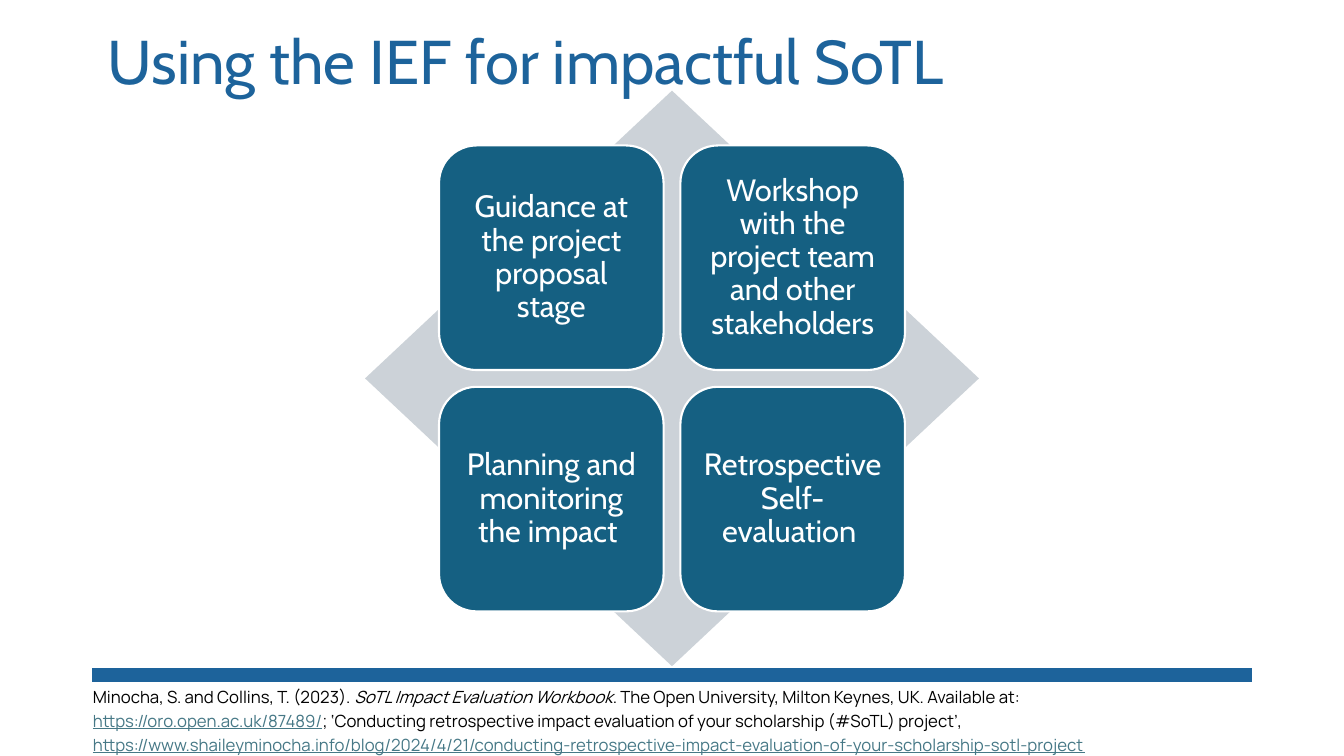
"""Build the slide on using the IEF for impactful SoTL."""
from dataclasses import dataclass

from lxml.etree import SubElement
from pptx import Presentation
from pptx.dml.color import RGBColor
from pptx.enum.shapes import MSO_CONNECTOR as Connector, MSO_SHAPE as Preset
from pptx.enum.text import MSO_ANCHOR as Anchor, MSO_AUTO_SIZE as AutoSize, PP_ALIGN as Align
from pptx.oxml.ns import qn
from pptx.util import Pt

BLUE, TEAL, GREY, WHITE, BLACK, LINK = "1D639B", "156082", "CCD2D8", "FFFFFF", "000000", "467886"
CENTRE_X, CENTRE_Y = 480, 270.3
DIAMOND_WIDTH, DIAMOND_HEIGHT = 438.5, 411.1
TILE_SIZE, TILE_PITCH = 160.4, 172.4


@dataclass(frozen=True)
class Use:
    text: str
    column: int
    row: int


@dataclass(frozen=True)
class Citation:
    text: str
    colour: str = BLACK
    italic: bool = False
    underline: bool = False


USES = [
    Use("Guidance at the project proposal stage", 0, 0),
    Use("Workshop with the project team and other stakeholders", 1, 0),
    Use("Planning and monitoring the impact ", 0, 1),
    Use("Retrospective Self-evaluation ", 1, 1),
]
CITATIONS = [
    Citation("Minocha, S. and Collins, T. (2023). "),
    Citation("SoTL Impact Evaluation Workbook", italic=True),
    Citation(". The Open University, Milton Keynes, UK. Available at: "),
    Citation("https://oro.open.ac.uk/87489/", LINK, underline=True),
    Citation("; ‘Conducting retrospective impact evaluation of your scholarship (#SoTL) project’, "),
    Citation("https://www.shaileyminocha.info/blog/2024/4/21/"
             "conducting-retrospective-impact-evaluation-of-your-scholarship-sotl-project",
             LINK, underline=True),
]


def rgb(colour: str) -> RGBColor:
    return RGBColor.from_string(colour)


def apply(target, formats: dict) -> None:
    for attribute, value in formats.items():
        setattr(target, attribute, value)


def add_run(paragraph, text: str, colour: str, **formats) -> None:
    run = paragraph.add_run()
    run.text = text
    apply(run.font, formats)
    run.font.color.rgb = rgb(colour)


def add_filled(slide, preset: Preset, centre_x: float, centre_y: float,
               width: float, height: float, colour: str):
    filled = slide.shapes.add_shape(preset, Pt(centre_x - width / 2), Pt(centre_y - height / 2),
                                    Pt(width), Pt(height))
    filled.shadow.inherit = False
    filled.fill.solid()
    filled.fill.fore_color.rgb = rgb(colour)
    filled.line.fill.background()
    return filled


def add_use(slide, use: Use) -> None:
    tile = add_filled(slide, Preset.ROUNDED_RECTANGLE,
                      CENTRE_X + (use.column - 0.5) * TILE_PITCH,
                      CENTRE_Y + (use.row - 0.5) * TILE_PITCH, TILE_SIZE, TILE_SIZE, TEAL)
    tile.line.color.rgb = rgb(WHITE)
    tile.line.width = Pt(1.5)
    inset = Pt(6.6)
    apply(tile.text_frame, dict(word_wrap=True, vertical_anchor=Anchor.MIDDLE, margin_left=inset,
                                margin_right=inset, margin_top=inset, margin_bottom=inset))
    wording = tile.text_frame.paragraphs[0]
    apply(wording, dict(alignment=Align.CENTER, line_spacing=0.9))
    add_run(wording, use.text, WHITE, name="Cabin", size=Pt(22))


def add_title(slide, text: str) -> None:
    title = slide.shapes.title
    apply(title, dict(left=Pt(69.8), top=Pt(-1.4), width=Pt(890), height=Pt(74.9)))
    apply(title.text_frame, dict(word_wrap=True, vertical_anchor=Anchor.BOTTOM,
                                 auto_size=AutoSize.NONE))
    heading = title.text_frame.paragraphs[0]
    apply(heading, dict(alignment=Align.LEFT, line_spacing=0.9))
    add_run(heading, text, BLUE, name="Cabin", size=Pt(44.1))


def add_rule(slide) -> None:
    rule = slide.shapes.add_connector(Connector.STRAIGHT, Pt(66), Pt(482.2), Pt(894), Pt(482.2))
    rule.line.color.rgb = rgb(BLUE)
    rule.line.width = Pt(10)
    SubElement(rule.line._get_or_add_ln().getparent(), qn("a:effectLst"))


def add_reference(slide) -> None:
    reference = slide.shapes.add_textbox(Pt(59.3), Pt(483.8), Pt(836), Pt(59))
    apply(reference.text_frame, dict(word_wrap=True, auto_size=AutoSize.SHAPE_TO_FIT_TEXT))
    entry = reference.text_frame.paragraphs[0]
    apply(entry, dict(line_spacing=1.2, space_before=Pt(3), space_after=Pt(6)))
    for citation in CITATIONS:
        add_run(entry, citation.text, citation.colour, name="Manrope", size=Pt(12),
                italic=citation.italic, underline=citation.underline)


def main() -> None:
    deck = Presentation()
    apply(deck, dict(slide_width=Pt(960), slide_height=Pt(540)))
    slide = deck.slides.add_slide(deck.slide_layouts[5])
    add_rule(slide)
    add_title(slide, "Using the IEF for impactful SoTL")
    add_filled(slide, Preset.DIAMOND, CENTRE_X, CENTRE_Y, DIAMOND_WIDTH, DIAMOND_HEIGHT, GREY)
    for use in USES:
        add_use(slide, use)
    add_reference(slide)
    deck.save("out.pptx")


if __name__ == "__main__":
    main()
